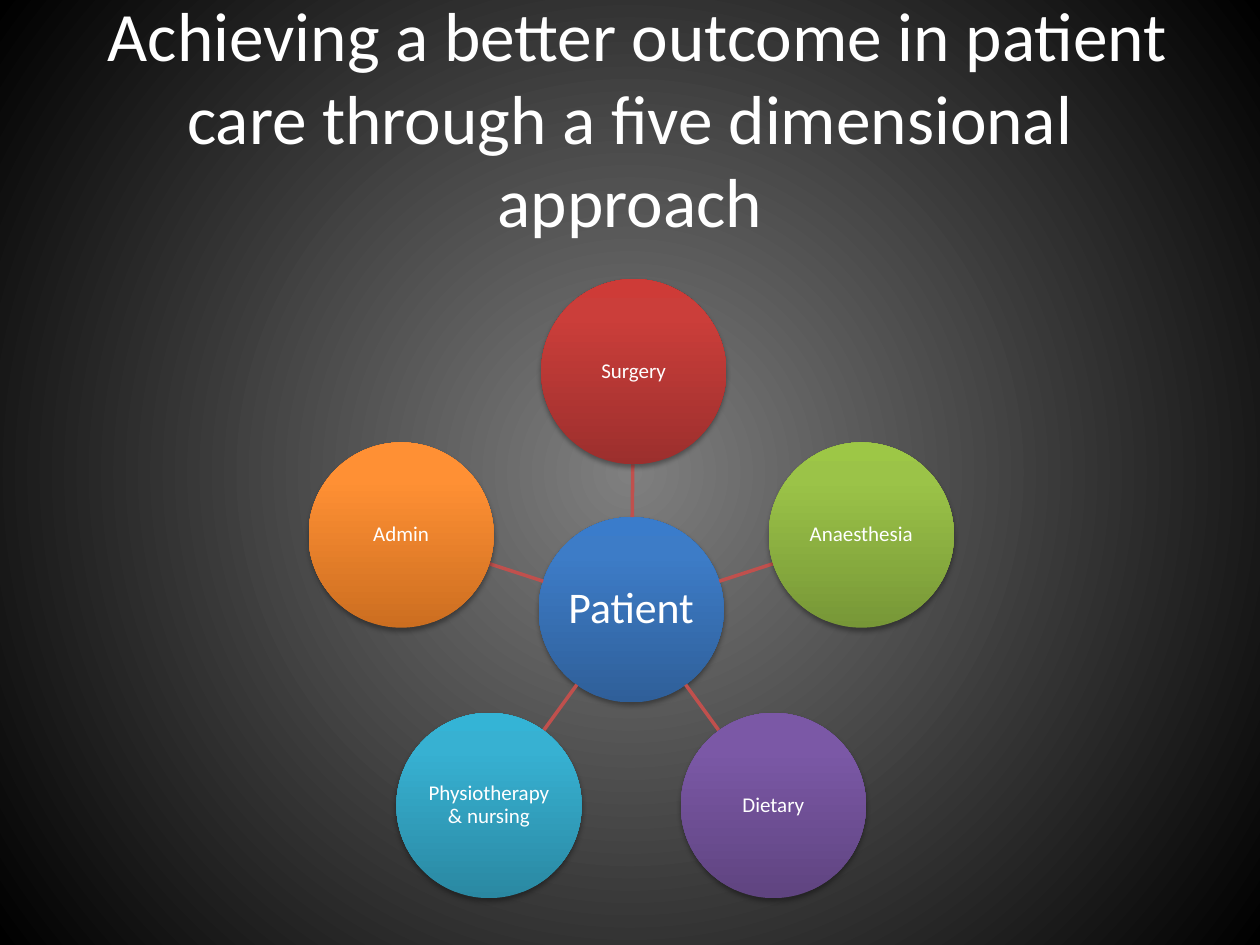
import math

from lxml import etree
from pptx import Presentation
from pptx.dml.color import RGBColor
from pptx.enum.shapes import MSO_CONNECTOR, MSO_SHAPE
from pptx.enum.text import MSO_ANCHOR, MSO_AUTO_SIZE, PP_ALIGN
from pptx.oxml.ns import qn
from pptx.util import Inches, Pt

OVAL = MSO_SHAPE.OVAL
STRAIGHT = MSO_CONNECTOR.STRAIGHT
MIDDLE = MSO_ANCHOR.MIDDLE
CENTER = PP_ALIGN.CENTER
NO_AUTOFIT = MSO_AUTO_SIZE.NONE
TITLE_ONLY_LAYOUT = 5

COLORS = {"text": "FFFFFF", "spoke": "C0504D", "shadow": "000000"}
# Gradient stops: (position in percent, colour)
BACKGROUND = [(0, "7F7F7F"), (100, "000000")]
GRADIENTS = {
    "blue": [(0, "2F5F99"), (80, "3D7CC7"), (100, "3A7CCB")],
    "red": [(0, "9C2F2D"), (80, "CB3E3A"), (100, "CE3B37")],
    "green": [(0, "779737"), (80, "9BC348"), (100, "9DC746")],
    "purple": [(0, "5F4480"), (80, "7B58A6"), (100, "7C57A8")],
    "teal": [(0, "2A88A2"), (80, "37B1D2"), (100, "34B4D6")],
    "orange": [(0, "CC6E20"), (80, "FF9034"), (100, "FF9136")],
}

DIAMETER = 1.47
HUB = (5.01, 4.84)
ORBIT = 1.92
# Clockwise from the top: (label, gradient, nudge from the regular position)
DIMENSIONS = [
    ("Surgery", "red", (0.02, 0.03)),
    ("Anaesthesia", "green", (0, 0)),
    ("Dietary", "purple", (0, 0)),
    ("Physiotherapy & nursing", "teal", (0, 0)),
    ("Admin", "orange", (0, 0)),
]


def add_child(parent, tag, **attributes):
    child = etree.SubElement(parent, qn(tag))
    for name, value in attributes.items():
        child.set(name, str(value))
    return child


def set_gradient(fill, owner, stops, circular=False):
    """Give the fill found inside owner these stops, circular or bottom to top."""
    fill.gradient()
    gradient = next(owner.iter(qn("a:gradFill")))
    for child in list(gradient):
        gradient.remove(child)
    stop_list = add_child(gradient, "a:gsLst")
    for position, color in stops:
        stop = add_child(stop_list, "a:gs", pos=position * 1000)
        add_child(stop, "a:srgbClr", val=color)
    if circular:
        shade = add_child(gradient, "a:path", path="circle")
        add_child(shade, "a:fillToRect", l=50000, t=50000, r=50000, b=50000)
    else:
        add_child(gradient, "a:lin", ang=270 * 60000, scaled=0)


class RadialSlide:
    font_name = "Calibri"

    def __init__(self, presentation):
        layout = presentation.slide_layouts[TITLE_ONLY_LAYOUT]
        self.slide = presentation.slides.add_slide(layout)

    def background(self, stops):
        fill = self.slide.background.fill
        set_gradient(fill, self.slide.element, stops, circular=True)

    def set_text(self, shape, text, size):
        frame = shape.text_frame
        frame.text = text
        frame.word_wrap = True
        frame.auto_size = NO_AUTOFIT
        frame.vertical_anchor = MIDDLE
        paragraph = frame.paragraphs[0]
        paragraph.alignment = CENTER
        paragraph.font.name = self.font_name
        paragraph.font.size = Pt(size)
        paragraph.font.color.rgb = RGBColor.from_string(COLORS["text"])
        return frame

    def title(self, text, left, top, width, height):
        shape = self.slide.shapes.title
        shape.left, shape.top = Inches(left), Inches(top)
        shape.width, shape.height = Inches(width), Inches(height)
        self.set_text(shape, text, 39.6)

    def circle(self, text, center, gradient, size):
        left, top = (value - DIAMETER / 2 for value in center)
        shape = self.slide.shapes.add_shape(
            OVAL, Inches(left), Inches(top), Inches(DIAMETER), Inches(DIAMETER))
        properties = shape.element.spPr
        set_gradient(shape.fill, properties, GRADIENTS[gradient])
        shape.line.fill.background()
        shape.shadow.inherit = False
        shadow = add_child(
            properties.find(qn("a:effectLst")), "a:outerShdw", blurRad=Pt(3.1),
            dist=Pt(1.8), dir=90 * 60000, rotWithShape=0)
        color = add_child(shadow, "a:srgbClr", val=COLORS["shadow"])
        add_child(color, "a:alpha", val=35000)
        frame = self.set_text(shape, text, size)
        frame.margin_left = frame.margin_right = Inches(0.01)
        frame.margin_top = frame.margin_bottom = Inches(0.01)
        frame.paragraphs[0].line_spacing = 0.9

    def spoke(self, start, end):
        """Join the rims of the circles centred on start and end."""
        share = DIAMETER / 2 / math.dist(start, end)
        inset = [(b - a) * share for a, b in zip(start, end)]
        first = [Inches(a + step) for a, step in zip(start, inset)]
        last = [Inches(b - step) for b, step in zip(end, inset)]
        connector = self.slide.shapes.add_connector(STRAIGHT, *first, *last)
        connector.line.color.rgb = RGBColor.from_string(COLORS["spoke"])
        connector.line.width = Pt(2)
        add_child(connector.element.spPr, "a:effectLst")


def main():
    presentation = Presentation()
    presentation.slide_width = Inches(10)
    presentation.slide_height = Inches(7.5)

    page = RadialSlide(presentation)
    page.background(BACKGROUND)
    page.title(" Achieving a better outcome in patient care through "
               "a five dimensional approach", 0.5, 0.3, 9, 1.25)
    page.circle("Patient", HUB, "blue", 25)
    for index, (label, gradient, nudge) in enumerate(DIMENSIONS):
        angle = math.tau * index / len(DIMENSIONS)
        center = (HUB[0] + ORBIT * math.sin(angle) + nudge[0],
                  HUB[1] - ORBIT * math.cos(angle) + nudge[1])
        page.spoke(HUB, center)
        page.circle(label, center, gradient, 12)

    presentation.save("out.pptx")


if __name__ == "__main__":
    main()
